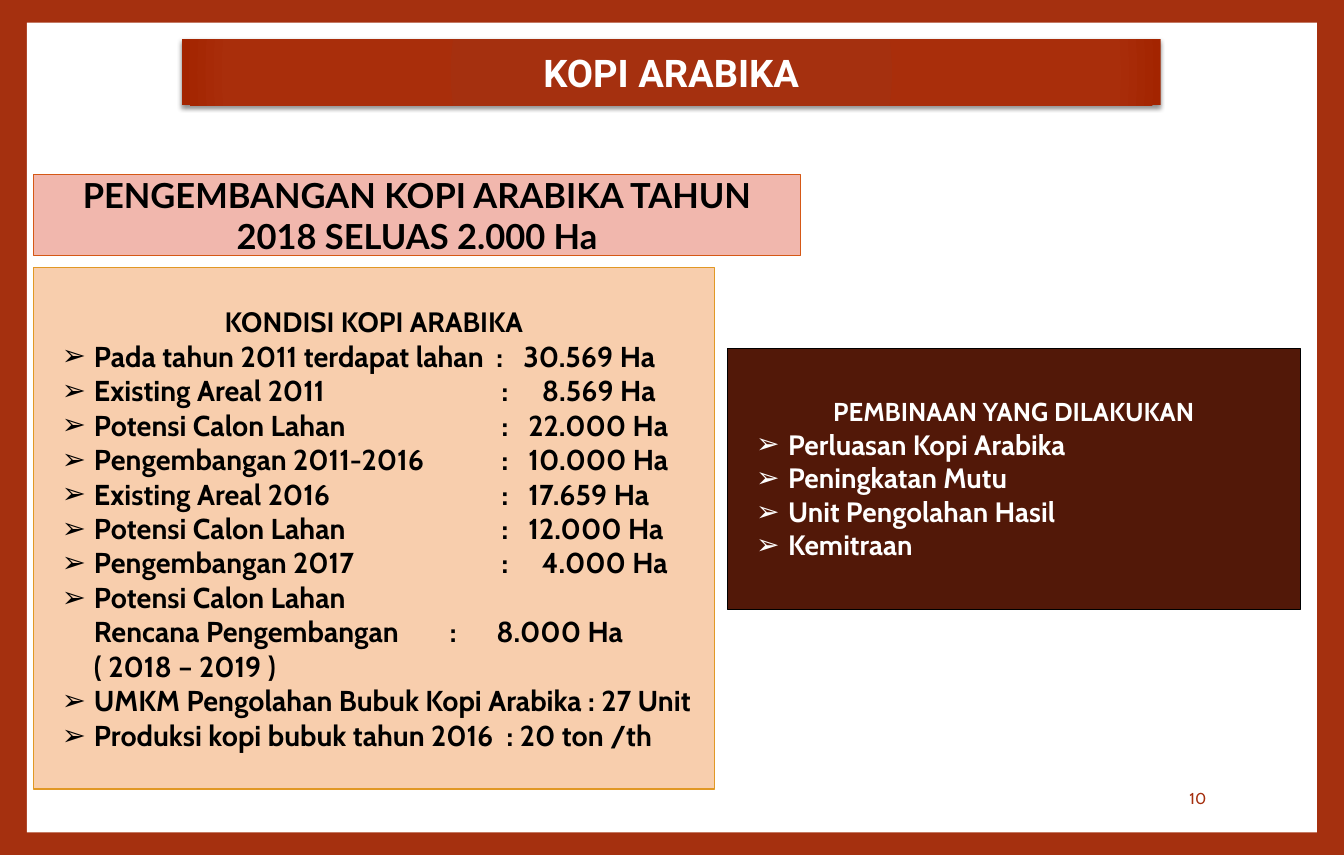
from dataclasses import dataclass
from typing import Optional

from lxml.etree import SubElement
from pptx import Presentation
from pptx.dml.color import RGBColor
from pptx.enum.shapes import MSO_SHAPE
from pptx.enum.text import MSO_ANCHOR, PP_ALIGN
from pptx.oxml import parse_xml
from pptx.oxml.ns import nsdecls, qn
from pptx.shapes.autoshape import Shape
from pptx.slide import Slide
from pptx.util import Inches, Pt

COLORS = {
    "rust": "A5300F",
    "rust_mid": "A92E0B",
    "rust_edge": "A32400",
    "white": "FFFFFF",
    "black": "000000",
    "pink": "F1B7AD",
    "orange": "D55816",
    "peach": "F8CEAD",
    "amber": "E19825",
    "brown": "521808",
}
CM_PER_INCH = 2.54


@dataclass
class Line:
    text: str
    size: float
    font: str = "Cabin"
    align: PP_ALIGN = PP_ALIGN.CENTER
    bold: bool = True
    indented: bool = False
    bullet: bool = False
    tabs: tuple[float, ...] = ()


@dataclass
class Panel:
    left: float
    top: float
    width: float
    height: float
    lines: list[Line]
    text_color: str = "black"
    fill: Optional[str] = None
    border: Optional[str] = None


def item(text: str, size: float = 20, tabs: tuple[float, ...] = (), bullet: bool = True) -> Line:
    return Line(text, size, align=PP_ALIGN.LEFT, indented=True, bullet=bullet, tabs=tabs)


def rgb(name: str) -> RGBColor:
    return RGBColor.from_string(COLORS[name])


def write_line(paragraph, line: Line, color: str) -> None:
    paragraph.alignment = line.align
    properties = paragraph._p.get_or_add_pPr()
    if line.indented:
        properties.set("marL", str(Inches(0.49)))
    if line.bullet:
        properties.set("indent", str(Inches(-0.31)))
        SubElement(properties, qn("a:buFont"), typeface=line.font)
        SubElement(properties, qn("a:buChar"), char="➢")
    if line.tabs:
        tab_list = SubElement(properties, qn("a:tabLst"))
        for position in line.tabs:
            SubElement(tab_list, qn("a:tab"), pos=str(Inches(position)), algn="l")
    paragraph.add_run().text = line.text
    paragraph.font.name = line.font
    paragraph.font.size = Pt(line.size)
    paragraph.font.bold = line.bold
    paragraph.font.color.rgb = rgb(color)


def draw_panel(slide: Slide, panel: Panel) -> Shape:
    shape = slide.shapes.add_shape(
        MSO_SHAPE.RECTANGLE,
        Inches(panel.left), Inches(panel.top), Inches(panel.width), Inches(panel.height),
    )
    shape.shadow.inherit = False
    if panel.fill:
        shape.fill.solid()
        shape.fill.fore_color.rgb = rgb(panel.fill)
    else:
        shape.fill.background()
    if panel.border:
        shape.line.color.rgb = rgb(panel.border)
        shape.line.width = Pt(0.79)
    else:
        shape.line.fill.background()
    frame = shape.text_frame
    frame.word_wrap = True
    frame.vertical_anchor = MSO_ANCHOR.MIDDLE
    for index, line in enumerate(panel.lines):
        paragraph = frame.add_paragraph() if index else frame.paragraphs[0]
        write_line(paragraph, line, panel.text_color)
    return shape


def style_banner(banner: Shape) -> None:
    stops = "".join(
        f'<a:gs pos="{position * 1000}"><a:srgbClr val="{COLORS[name]}"/></a:gs>'
        for position, name in ((0, "rust"), (90, "rust_mid"), (100, "rust_edge"))
    )
    gradient = parse_xml(
        f'<a:gradFill {nsdecls("a")}><a:gsLst>{stops}</a:gsLst><a:path path="circle">'
        '<a:fillToRect l="100000" t="100000" r="100000" b="100000"/></a:path></a:gradFill>'
    )
    properties = banner._element.spPr
    properties.replace(properties.find(qn("a:solidFill")), gradient)
    shadow = SubElement(
        properties.find(qn("a:effectLst")), qn("a:outerShdw"),
        blurRad=str(Pt(3)), dist=str(Pt(2)), dir="5400000", rotWithShape="0",
    )
    shadow_color = SubElement(shadow, qn("a:srgbClr"), val=COLORS["black"])
    SubElement(shadow_color, qn("a:alpha"), val="45000")


NARROW_TABS = (4.43, 4.69)
WIDE_TABS = (4.43, 4.82)

PANELS = [
    Panel(0.26, 0.22, 12.47, 7.83, [], fill="white"),
    Panel(9.94, 7.5, 1.82, 0.44,
          [Line("10", 11, align=PP_ALIGN.RIGHT, bold=False)], text_color="rust"),
    Panel(0.32, 1.69, 7.42, 0.78,
          [Line("PENGEMBANGAN KOPI ARABIKA TAHUN 2018 SELUAS 2.000 Ha", 24, "Lato")],
          fill="pink", border="orange"),
    Panel(0.32, 2.59, 6.59, 5.04, [
        Line("KONDISI KOPI ARABIKA", 19.5),
        item("Pada tahun 2011 terdapat lahan\t:\t30.569 Ha", tabs=(4.38, 4.64)),
        item("Existing Areal 2011\t:\t8.569 Ha", tabs=WIDE_TABS),
        item("Potensi Calon Lahan\t:\t22.000 Ha", tabs=NARROW_TABS),
        item("Pengembangan 2011-2016\t:\t10.000 Ha", tabs=NARROW_TABS),
        item("Existing Areal 2016\t:\t17.659 Ha", tabs=NARROW_TABS),
        item("Potensi Calon Lahan\t:\t12.000 Ha", tabs=NARROW_TABS),
        item("Pengembangan 2017\t:\t4.000 Ha", tabs=WIDE_TABS),
        item("Potensi Calon Lahan"),
        item("Rencana Pengembangan\t:\t8.000 Ha", tabs=(3.44, 3.89), bullet=False),
        item("( 2018 – 2019 )", bullet=False),
        item("UMKM Pengolahan Bubuk Kopi Arabika : 27 Unit"),
        item("Produksi kopi bubuk tahun 2016\t: 20 ton /th", tabs=(4.48,)),
    ], fill="peach", border="amber"),
    Panel(7.03, 3.37, 5.54, 2.52, [
        Line("PEMBINAAN YANG DILAKUKAN", 18),
        item("Perluasan Kopi Arabika", 19.5),
        item("Peningkatan Mutu", 19.5),
        item("Unit Pengolahan Hasil", 19.5),
        item("Kemitraan", 19.5),
    ], text_color="white", fill="brown", border="black"),
]
BANNER = Panel(1.76, 0.38, 9.46, 0.64, [Line("KOPI ARABIKA", 26.5, "Roboto")],
               text_color="white", fill="rust")


def main() -> None:
    presentation = Presentation()
    presentation.slide_width = Inches(33 / CM_PER_INCH)
    presentation.slide_height = Inches(21 / CM_PER_INCH)
    slide = presentation.slides.add_slide(presentation.slide_layouts[6])
    slide.background.fill.solid()
    slide.background.fill.fore_color.rgb = rgb("rust")
    for panel in PANELS:
        draw_panel(slide, panel)
    style_banner(draw_panel(slide, BANNER))
    presentation.save("out.pptx")


if __name__ == "__main__":
    main()
